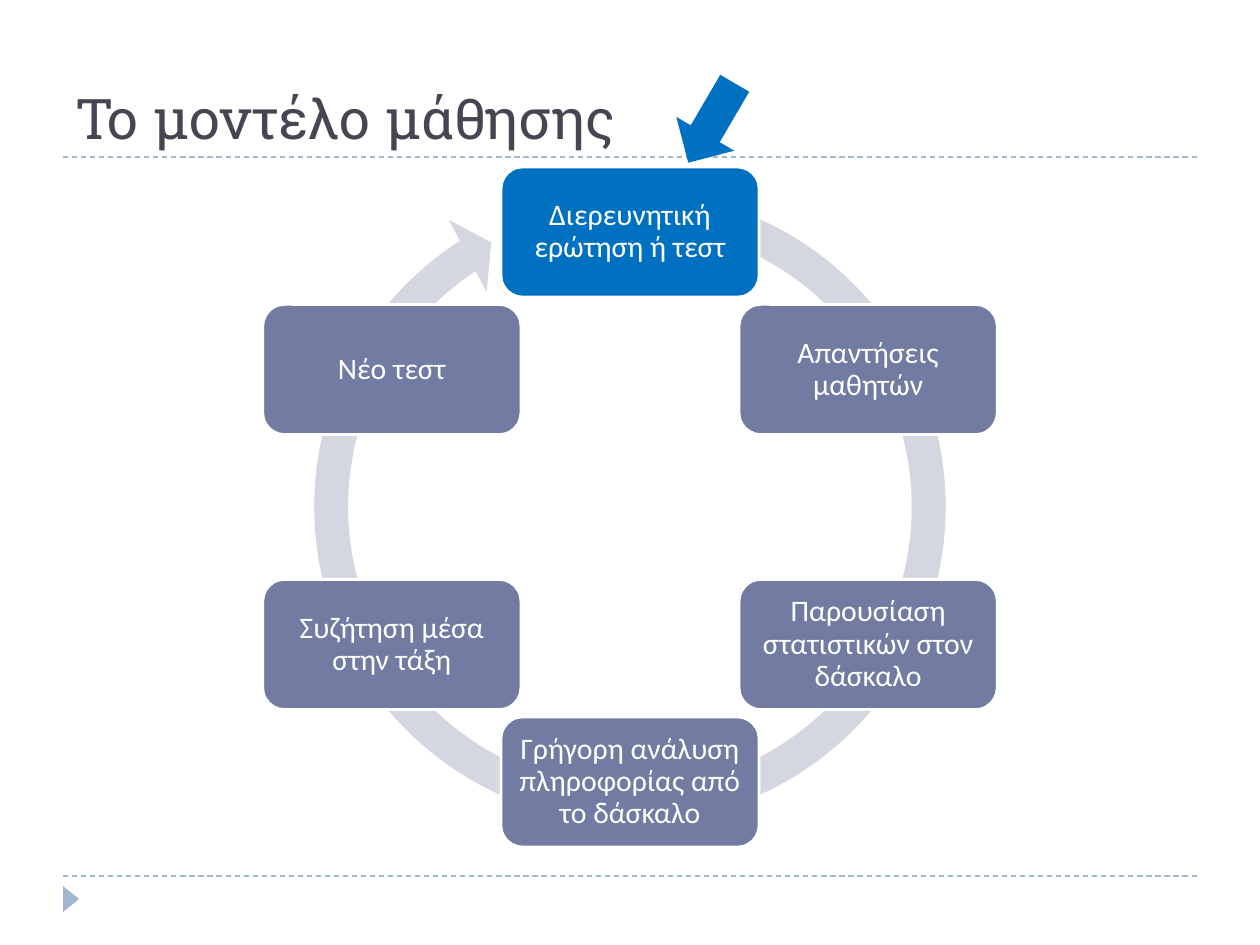
import math
from dataclasses import dataclass

import pptx
import pptx.dml.color
import pptx.enum.dml
import pptx.enum.shapes
import pptx.enum.text
import pptx.oxml.ns
import pptx.util
from lxml import etree

SHAPE = pptx.enum.shapes.MSO_SHAPE
ALIGN = pptx.enum.text.PP_ALIGN
ANCHOR = pptx.enum.text.MSO_ANCHOR
EMU_PER_PX = 914400 / 126


@dataclass(frozen=True)
class Theme:
    title: str = "464653"
    rule: str = "9FB8CD"
    ring: str = "D5D7E0"
    step: str = "727CA3"
    accent: str = "0070C0"
    white: str = "FFFFFF"
    title_font: str = "Roboto Slab"
    body_font: str = "Calibri"
    title_size: int = 32
    step_size: int = 17


THEME = Theme()
STEPS = [
    "Διερευνητική ερώτηση ή τεστ",
    "Απαντήσεις μαθητών",
    "Παρουσίαση στατιστικών στον δάσκαλο",
    "Γρήγορη ανάλυση πληροφορίας από το δάσκαλο",
    "Συζήτηση μέσα στην τάξη",
    "Νέο τεστ",
]
CENTER_X, CENTER_Y, RADIUS = 630, 507, 275
STEP_W, STEP_H = 258, 130
RING_SIZE = 679


def px(n):
    return pptx.util.Emu(round(n * EMU_PER_PX))


def rgb(color):
    return pptx.dml.color.RGBColor.from_string(color)


def style_text(tf, font, size, color, align, anchor):
    tf.word_wrap = True
    tf.auto_size = pptx.enum.text.MSO_AUTO_SIZE.NONE
    tf.vertical_anchor = anchor
    for p in tf.paragraphs:
        p.alignment = align
        for r in p.runs:
            r.font.name = font
            r.font.size = pptx.util.Pt(size)
            r.font.color.rgb = rgb(color)


def add_title(s, text):
    sp = s.shapes.title
    sp.left, sp.top, sp.width, sp.height = px(63), px(21), px(1134), px(136)
    sp.text_frame.text = text
    style_text(sp.text_frame, THEME.title_font, THEME.title_size, THEME.title,
               ALIGN.LEFT, ANCHOR.BOTTOM)


def add_rule(s, y):
    line = s.shapes.add_connector(
        pptx.enum.shapes.MSO_CONNECTOR.STRAIGHT, px(63), px(y), px(1197), px(y))
    line.line.color.rgb = rgb(THEME.rule)
    line.line.width = pptx.util.Pt(0.75)
    line.line.dash_style = pptx.enum.dml.MSO_LINE.DASH
    etree.SubElement(line._element.spPr, pptx.oxml.ns.qn("a:effectLst"))


def add_solid(s, kind, x, y, w, h, color, rotation=0):
    sp = s.shapes.add_shape(kind, px(x), px(y), px(w), px(h))
    sp.shadow.inherit = False
    sp.fill.solid()
    sp.fill.fore_color.rgb = rgb(color)
    sp.line.fill.background()
    sp.rotation = rotation
    return sp


def add_ring(s):
    sp = add_solid(s, SHAPE.CIRCULAR_ARROW, CENTER_X - RING_SIZE / 2,
                   CENTER_Y - RING_SIZE / 2, RING_SIZE, RING_SIZE, THEME.ring)
    for i, value in enumerate((0.05, 3.13, 142.27, 171.28, 0.06)):
        sp.adjustments[i] = value


def add_step(s, text, angle, color):
    x = CENTER_X + RADIUS * math.sin(angle) - STEP_W / 2
    y = CENTER_Y - RADIUS * math.cos(angle) - STEP_H / 2
    sp = add_solid(s, SHAPE.ROUNDED_RECTANGLE, x, y, STEP_W, STEP_H, color)
    sp.line.color.rgb = rgb(THEME.white)
    sp.line.width = pptx.util.Pt(1.5)
    tf = sp.text_frame
    tf.text = text
    tf.margin_left = tf.margin_right = tf.margin_top = tf.margin_bottom = px(4)
    style_text(tf, THEME.body_font, THEME.step_size, THEME.white,
               ALIGN.CENTER, ANCHOR.MIDDLE)
    tf.paragraphs[0].line_spacing = 0.9


def add_cycle(s):
    add_ring(s)
    for i, text in enumerate(STEPS):
        color = THEME.accent if i == 0 else THEME.step
        add_step(s, text, i * math.tau / len(STEPS), color)


def main():
    prs = pptx.Presentation()
    prs.slide_width, prs.slide_height = px(1260), px(945)
    s = prs.slides.add_slide(prs.slide_layouts[5])
    for y in (876, 157):
        add_rule(s, y)
    add_solid(s, SHAPE.ISOSCELES_TRIANGLE, 58, 891, 26, 16, THEME.rule, 90)
    add_title(s, "Το μοντέλο μάθησης")
    add_cycle(s)
    add_solid(s, SHAPE.DOWN_ARROW, 678, 77, 67, 92, THEME.accent, 30.3)
    prs.save("out.pptx")


if __name__ == "__main__":
    main()
